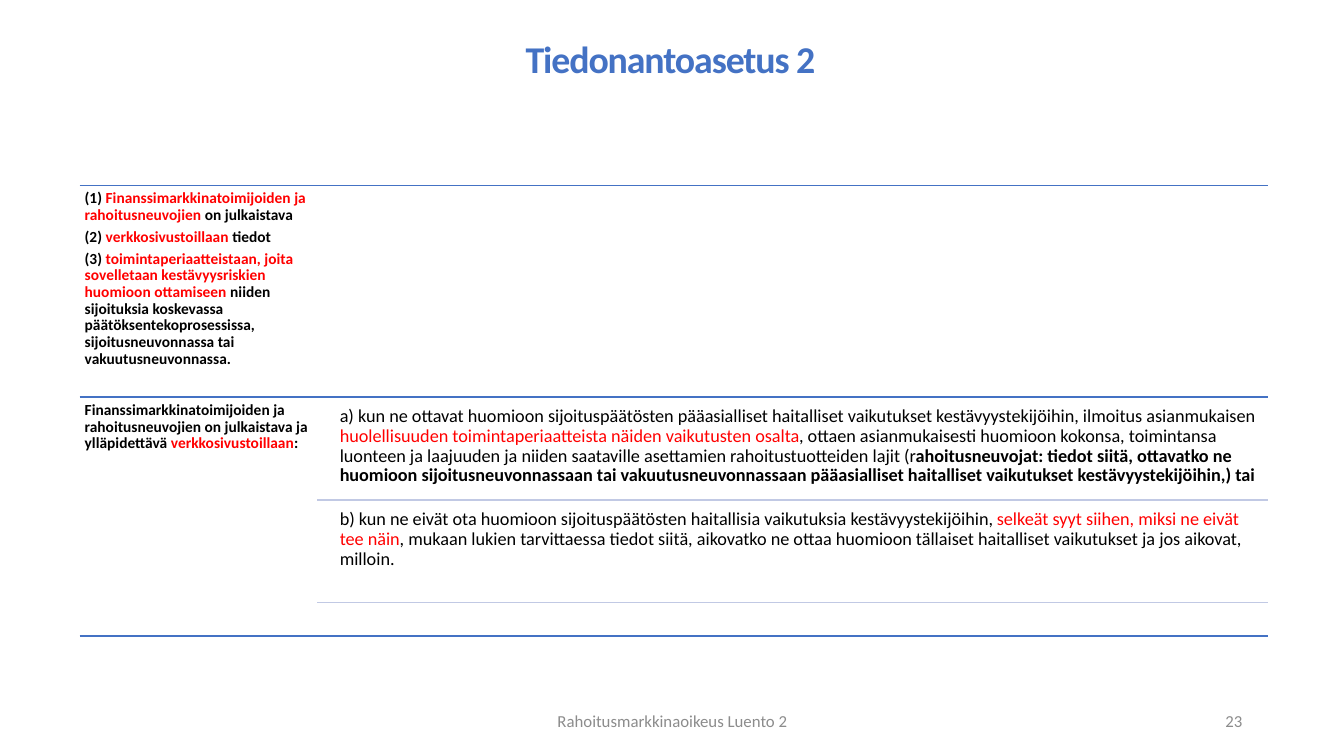
"""Build the slide on the disclosure regulation as a ruled two-column outline."""
from dataclasses import dataclass

from lxml import etree
from pptx import Presentation
from pptx.dml.color import RGBColor
from pptx.enum.shapes import MSO_CONNECTOR
from pptx.enum.text import MSO_ANCHOR, MSO_AUTO_SIZE, PP_ALIGN
from pptx.oxml.ns import qn
from pptx.util import Inches, Pt

STRAIGHT = MSO_CONNECTOR.STRAIGHT
TOP, MIDDLE = MSO_ANCHOR.TOP, MSO_ANCHOR.MIDDLE
LEFT, CENTER, RIGHT = PP_ALIGN.LEFT, PP_ALIGN.CENTER, PP_ALIGN.RIGHT


@dataclass(frozen=True)
class Theme:
    font: str = "Calibri"
    accent: str = "4472C4"
    rule: str = "C1C9E4"
    text: str = "000000"
    key: str = "FF0000"
    muted: str = "8C8C8C"
    title: float = 27
    heading: float = 11
    body: float = 13
    footer: float = 12


T = Theme()
PLAIN, BOLD = (T.text, False), (T.text, True)
KEY, KEY_BOLD = (T.key, False), (T.key, True)
MUTED = (T.muted, False)

TITLE = "Tiedonantoasetus 2 "
ROWS = [
    {
        "heading": [
            [("(1) ", BOLD),
             ("Finanssimarkkinatoimijoiden ja rahoitusneuvojien", KEY_BOLD),
             (" on julkaistava", BOLD)],
            [("(2) ", BOLD), ("verkkosivustoillaan", KEY_BOLD), (" tiedot", BOLD)],
            [("(3) ", BOLD),
             ("toimintaperiaatteistaan, joita sovelletaan kestävyysriskien "
              "huomioon ottamiseen ", KEY_BOLD),
             ("niiden sijoituksia koskevassa päätöksentekoprosessissa, "
              "sijoitusneuvonnassa tai vakuutusneuvonnassa.", BOLD)],
        ],
        "items": [],
    },
    {
        "heading": [
            [("Finanssimarkkinatoimijoiden ja rahoitusneuvojien on julkaistava "
              "ja ylläpidettävä ", BOLD),
             ("verkkosivustoillaan", KEY_BOLD), (":", BOLD)],
        ],
        "items": [
            [("a) kun ne ottavat huomioon sijoituspäätösten pääasialliset "
              "haitalliset vaikutukset kestävyystekijöihin, ilmoitus "
              "asianmukaisen ", PLAIN),
             ("huolellisuuden toimintaperiaatteista näiden vaikutusten osalta", KEY),
             (", ottaen asianmukaisesti huomioon kokonsa, toimintansa luonteen "
              "ja laajuuden ja niiden saataville asettamien rahoitustuotteiden "
              "lajit (r", PLAIN),
             ("ahoitusneuvojat: tiedot siitä, ottavatko ne huomioon "
              "sijoitusneuvonnassaan tai vakuutusneuvonnassaan pääasialliset "
              "haitalliset vaikutukset kestävyystekijöihin,) tai", BOLD)],
            [("b) kun ne eivät ota huomioon sijoituspäätösten haitallisia "
              "vaikutuksia kestävyystekijöihin, ", PLAIN),
             ("selkeät syyt siihen, miksi ne eivät tee näin", KEY),
             (", mukaan lukien tarvittaessa tiedot siitä, aikovatko ne ottaa "
              "huomioon tällaiset haitalliset vaikutukset ja jos aikovat, "
              "milloin.", PLAIN)],
        ],
    },
]
FOOTERS = [
    ("Rahoitusmarkkinaoikeus Luento 2", 4.42, 4.5, CENTER),
    ("23", 9.42, 3, RIGHT),
]

SLIDE_W, SLIDE_H = 13.33, 7.5
X, W = 0.79, 11.79
HEAD_W = W / 5
ITEM_X, ITEM_W = 3.32, 9.26
ROW_Y, ROW_H = 1.84, 2.1
ITEM_GAP, ITEM_H = 0.05, 0.97
TITLE_Y, TITLE_H = 0.42, 1.31
BASE_Y = 6.31
FOOT_Y, FOOT_H = 6.95, 0.4


def add_line(slide, x, y, color):
    line = slide.shapes.add_connector(
        STRAIGHT, Inches(x), Inches(y), Inches(X + W), Inches(y))
    line.line.color.rgb = RGBColor.from_string(color)
    line.line.width = Pt(1)
    etree.SubElement(line._element.spPr, qn("a:effectLst"))


def style_run(r, size, color, bold):
    r.font.name = T.font
    r.font.size = Pt(size)
    r.font.bold = bold
    r.font.color.rgb = RGBColor.from_string(color)


def set_frame(tf, inset, anchor):
    tf.word_wrap = True
    tf.auto_size = MSO_AUTO_SIZE.NONE
    tf.vertical_anchor = anchor
    tf.margin_left = tf.margin_right = Inches(inset)
    tf.margin_top = tf.margin_bottom = Inches(min(inset, 0.05))


def fill_text(tf, paragraphs, size, align, spacing, after):
    for i, runs in enumerate(paragraphs):
        p = tf.add_paragraph() if i else tf.paragraphs[0]
        p.alignment = align
        p.line_spacing = spacing
        p.space_before = Pt(0)
        p.space_after = Pt(after)
        for text, (color, bold) in runs:
            r = p.add_run()
            r.text = text
            style_run(r, size, color, bold)


def add_text(slide, box, paragraphs, size, inset=0.05, anchor=TOP,
             align=LEFT, spacing=0.9, after=0.0):
    sp = slide.shapes.add_textbox(*map(Inches, box))
    set_frame(sp.text_frame, inset, anchor)
    fill_text(sp.text_frame, paragraphs, size, align, spacing, after)


def add_title(slide):
    sp = slide.shapes.title
    sp.left, sp.top = Inches(X), Inches(TITLE_Y)
    sp.width, sp.height = Inches(W), Inches(TITLE_H)
    set_frame(sp.text_frame, 0, TOP)
    fill_text(sp.text_frame, [[(TITLE, (T.accent, True))]], T.title, CENTER, 0.85, 0)
    r = sp.text_frame.paragraphs[0].runs[0]
    r.font._element.set("spc", "-80")


def add_row(slide, y, row):
    add_line(slide, X, y, T.accent)
    add_text(slide, (X, y, HEAD_W, ROW_H), row["heading"], T.heading,
             after=0.35 * T.heading)
    for i, item in enumerate(row["items"]):
        top = y + ITEM_GAP + i * (ITEM_H + ITEM_GAP)
        add_text(slide, (ITEM_X, top, ITEM_W, ITEM_H), [item], T.body)
        add_line(slide, X + HEAD_W, top + ITEM_H, T.rule)


def main():
    prs = Presentation()
    prs.slide_width, prs.slide_height = Inches(SLIDE_W), Inches(SLIDE_H)
    slide = prs.slides.add_slide(prs.slide_layouts[5])
    add_line(slide, X, BASE_Y, T.accent)
    add_title(slide)
    for i, row in enumerate(ROWS):
        add_row(slide, ROW_Y + i * ROW_H, row)
    for text, x, w, align in FOOTERS:
        add_text(slide, (x, FOOT_Y, w, FOOT_H), [[(text, MUTED)]], T.footer,
                 inset=0.1, anchor=MIDDLE, align=align, spacing=1.0)
    prs.save("out.pptx")


if __name__ == "__main__":
    main()
